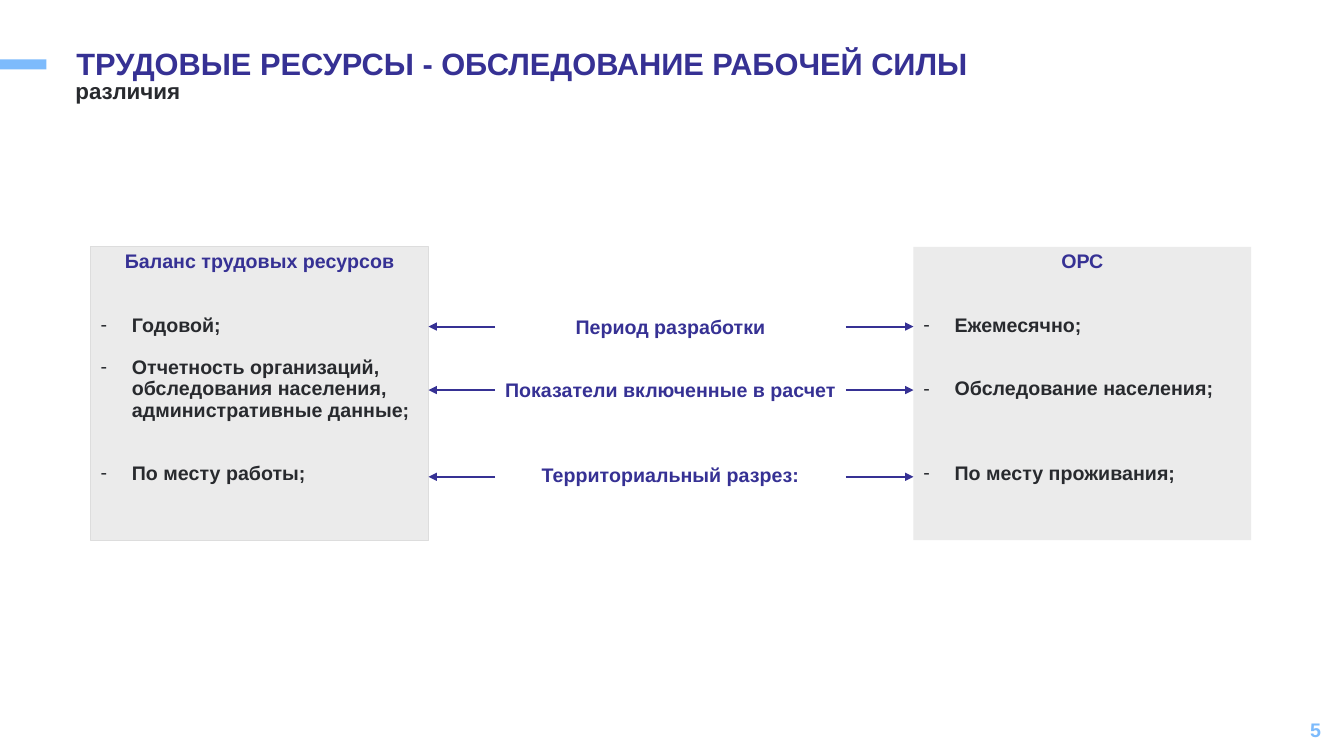
from dataclasses import dataclass

from lxml import etree
from pptx import Presentation
from pptx.dml.color import RGBColor
from pptx.enum.shapes import MSO_CONNECTOR, MSO_SHAPE
from pptx.enum.text import MSO_ANCHOR, PP_ALIGN
from pptx.oxml.ns import qn
from pptx.util import Inches, Pt

RECT = MSO_SHAPE.RECTANGLE
LINE = MSO_CONNECTOR.STRAIGHT
LEFT, MID, RIGHT = PP_ALIGN.LEFT, PP_ALIGN.CENTER, PP_ALIGN.RIGHT
TOP, CENTER = MSO_ANCHOR.TOP, MSO_ANCHOR.MIDDLE


@dataclass(frozen=True)
class Theme:
    face: str = "Arial"
    indigo: str = "363194"
    dark: str = "282A2E"
    sky: str = "7DBBFC"
    panel: str = "EBEBEB"
    edge: str = "DDDDDD"
    title: int = 22
    sub: int = 16
    body: int = 14


@dataclass(frozen=True)
class Para:
    text: str
    color: str
    size: int = 14
    align: PP_ALIGN = LEFT
    gap: float = 0  # empty lines above
    dash: bool = False


@dataclass(frozen=True)
class Box:
    x: float
    y: float
    w: float
    h: float


@dataclass(frozen=True)
class Panel:
    box: Box
    head: str
    items: tuple[tuple[str, int], ...]  # text, empty lines above
    edge: str = ""


THEME = Theme()
PITCH = 15.1  # height of one body line, points
INDENT = 0.31

BALANCE = Panel(
    Box(0.9, 2.45, 3.35, 2.91),
    "Баланс трудовых ресурсов",
    (
        ("Годовой;", 2),
        ("Отчетность организаций, обследования населения, административные данные;", 1),
        ("По месту работы;", 2),
    ),
    THEME.edge,
)
SURVEY = Panel(
    Box(9.06, 2.45, 3.35, 2.91),
    "ОРС",
    (("Ежемесячно;", 2), ("Обследование населения;", 2), ("По месту проживания;", 3)),
)
TOPICS = (
    ("Период разработки", 0),
    ("Показатели включенные в расчет", 2),
    ("Территориальный разрез:", 3),
)
LABELS = Box(4.91, 3.1, 3.48, 2.75)
LEVELS = (3.24, 3.87, 4.73)


def paint(shape, color: str) -> None:
    shape.shadow.inherit = False
    shape.fill.solid()
    shape.fill.fore_color.rgb = RGBColor.from_string(color)
    shape.line.fill.background()


def write(shape, paras: list[Para], anchor: MSO_ANCHOR = TOP) -> None:
    frame = shape.text_frame
    frame.word_wrap = True
    frame.vertical_anchor = anchor
    for i, item in enumerate(paras):
        para = frame.paragraphs[0] if i == 0 else frame.add_paragraph()
        para.text = item.text
        para.alignment = item.align
        para.line_spacing = 0.9
        if item.gap:
            para.space_before = Pt(item.gap * PITCH)
        if item.dash:
            props = para._p.get_or_add_pPr()
            props.set("marL", str(Inches(INDENT)))
            props.set("indent", str(-Inches(INDENT)))
            etree.SubElement(props, qn("a:buFont"), typeface=THEME.face)
            etree.SubElement(props, qn("a:buChar"), char="-")
        font = para.font
        font.name, font.size, font.bold = THEME.face, Pt(item.size), True
        font.color.rgb = RGBColor.from_string(item.color)


def add_rect(slide, box: Box, color: str):
    shape = slide.shapes.add_shape(
        RECT, Inches(box.x), Inches(box.y), Inches(box.w), Inches(box.h))
    paint(shape, color)
    return shape


def add_text(slide, box: Box, paras: list[Para], anchor: MSO_ANCHOR = TOP) -> None:
    shape = slide.shapes.add_textbox(
        Inches(box.x), Inches(box.y), Inches(box.w), Inches(box.h))
    write(shape, paras, anchor)


def add_panel(slide, panel: Panel) -> None:
    shape = add_rect(slide, panel.box, THEME.panel)
    if panel.edge:
        shape.line.color.rgb = RGBColor.from_string(panel.edge)
        shape.line.width = Pt(0.75)
    head = Para(panel.head, THEME.indigo, THEME.body, MID)
    items = [Para(text, THEME.dark, THEME.body, gap=gap, dash=True)
             for text, gap in panel.items]
    write(shape, [head, *items])


def add_arrow(slide, start: float, end: float, y: float) -> None:
    arrow = slide.shapes.add_connector(
        LINE, Inches(start), Inches(y), Inches(end), Inches(y))
    arrow.line.color.rgb = RGBColor.from_string(THEME.indigo)
    arrow.line.width = Pt(1.5)
    etree.SubElement(arrow.line._get_or_add_ln(), qn("a:tailEnd"), type="triangle")
    etree.SubElement(arrow._element.spPr, qn("a:effectLst"))


def main() -> None:
    deck = Presentation()
    deck.slide_width, deck.slide_height = Inches(13.33), Inches(7.5)
    slide = deck.slides.add_slide(deck.slide_layouts[6])

    # Accent bar, page number and headings
    add_rect(slide, Box(0, 0.59, 0.46, 0.1), THEME.sky)
    add_text(slide, Box(10.2, 7.05, 3, 0.4),
             [Para("5", THEME.sky, THEME.body, RIGHT)], CENTER)
    add_text(slide, Box(0.66, 0.44, 9.33, 0.57),
             [Para("ТРУДОВЫЕ РЕСУРСЫ - ОБСЛЕДОВАНИЕ РАБОЧЕЙ СИЛЫ",
                   THEME.indigo, THEME.title)])
    add_text(slide, Box(0.65, 0.75, 8.66, 0.34),
             [Para("различия", THEME.dark, THEME.sub)])

    # Compared sources
    for panel in (SURVEY, BALANCE):
        add_panel(slide, panel)

    # Topics between the panels
    add_text(slide, LABELS, [Para(text, THEME.indigo, THEME.body, MID, gap)
                             for text, gap in TOPICS])

    # Arrows from the topics to both panels
    for y in LEVELS:
        add_arrow(slide, LABELS.x, BALANCE.box.x + BALANCE.box.w, y)
        add_arrow(slide, LABELS.x + LABELS.w, SURVEY.box.x, y)

    deck.save("out.pptx")


if __name__ == "__main__":
    main()
